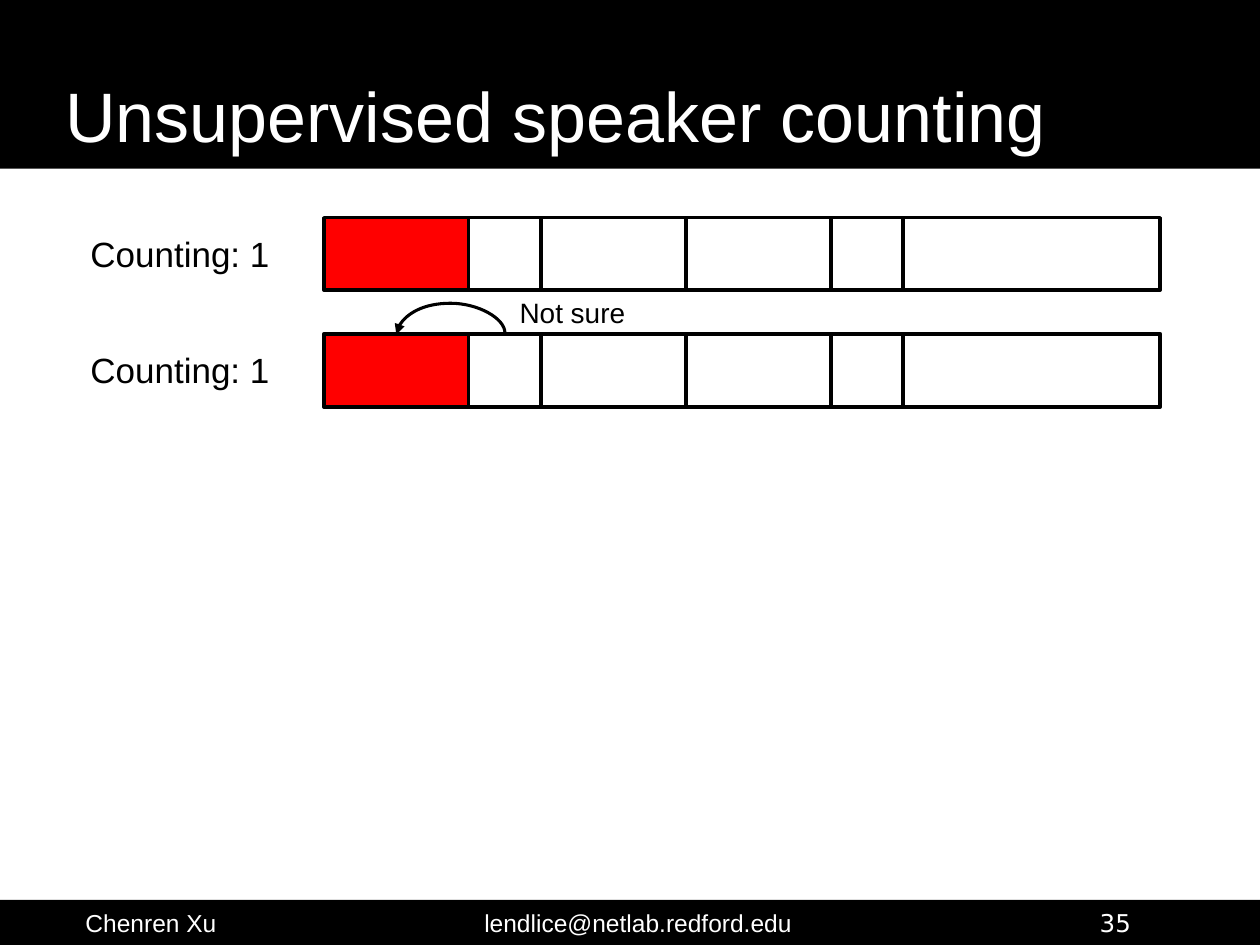
from pptx import Presentation
from pptx.dml.color import RGBColor
from pptx.enum.shapes import MSO_CONNECTOR, MSO_SHAPE
from pptx.enum.text import MSO_ANCHOR, PP_ALIGN
from pptx.oxml import parse_xml
from pptx.oxml.ns import nsdecls
from pptx.util import Cm, Pt

BLACK = RGBColor(0, 0, 0)
WHITE = RGBColor(255, 255, 255)
RED = RGBColor(255, 0, 0)
SEGMENT_WIDTHS = [2.92, 1.46, 2.92, 2.92, 1.46, 5.18]


def add_rect(shapes, x, y, w, h, fill, outlined=False):
    """Add a filled rectangle, with a black outline if asked."""
    sp = shapes.add_shape(MSO_SHAPE.RECTANGLE, Cm(x), Cm(y), Cm(w), Cm(h))
    sp.shadow.inherit = False
    sp.fill.solid()
    sp.fill.fore_color.rgb = fill
    if outlined:
        sp.line.color.rgb = BLACK
        sp.line.width = Pt(2)
    else:
        sp.line.fill.background()
    return sp


def add_text(s, x, y, w, h, text, size, color, align=PP_ALIGN.CENTER,
             anchor=MSO_ANCHOR.TOP, font="Arial"):
    """Add a one-paragraph text box."""
    tf = s.shapes.add_textbox(Cm(x), Cm(y), Cm(w), Cm(h)).text_frame
    tf.word_wrap = True
    tf.vertical_anchor = anchor
    p = tf.paragraphs[0]
    p.text = text
    p.alignment = align
    p.font.name = font
    p.font.size = Pt(size)
    p.font.color.rgb = color


def add_header(s, x, y, w, h):
    """Draw the title band."""
    add_rect(s.shapes, x, y, w, h, BLACK)
    add_text(s, x + 1.07, y + 1.17, w - 2.18, h - 1.29,
             "Unsupervised speaker counting", 40, WHITE,
             PP_ALIGN.LEFT, MSO_ANCHOR.BOTTOM)


def add_footer(s, x, y, w, h):
    """Draw the footer band with author, address and page number."""
    add_rect(s.shapes, x, y, w, h, BLACK)
    add_text(s, x + 1.09, y + 0.03, 3.91, 0.76, "Chenren Xu", 14, WHITE)
    add_text(s, x + 8.56, y + 0.03, 8.61, 0.76,
             "lendlice@netlab.redford.edu", 14, WHITE)
    add_text(s, x + 21.92, y + 0.03, 2.44, 0.74, "35", 14, WHITE,
             PP_ALIGN.LEFT, font="DejaVu Sans")


def add_counting_row(s, x, y, h):
    """Draw a counting label and its segmented bar."""
    add_text(s, x, y + 0.18, 5.28, 1.12, "Counting: 1", 20, BLACK)
    bar = s.shapes.add_group_shape()
    left = x + 5.54
    for i, width in enumerate(SEGMENT_WIDTHS):
        add_rect(bar.shapes, left, y, width, h, WHITE if i else RED, True)
        left += width


def add_comparison_arc(s, x, y, span):
    """Draw an arc above y from the second segment back to the first, with its label."""
    depth = 0.03
    cx = s.shapes.add_connector(MSO_CONNECTOR.CURVE, 0, 0, 0, 0)
    cx.left, cx.top = Cm(x + (span - depth) / 2), Cm(y - span / 2)
    cx.width, cx.height = Cm(depth), Cm(span)
    xfrm = cx._element.spPr.xfrm
    for name, value in (("rot", "5400000"), ("flipH", "1"), ("flipV", "1")):
        xfrm.set(name, value)
    guides = cx._element.spPr.prstGeom.get_or_add_avLst()
    guides.append(parse_xml(f'<a:gd {nsdecls("a")} name="adj1" fmla="val 2100000"/>'))
    cx.line.color.rgb = BLACK
    cx.line.width = Pt(1.75)
    cx.line._get_or_add_ln().append(
        parse_xml(f'<a:headEnd {nsdecls("a")} type="triangle"/>'))
    cx._element.spPr.append(parse_xml(f'<a:effectLst {nsdecls("a")}/>'))
    add_text(s, x + 0.87, y - 0.89, 5.36, 0.94, "Not sure", 16, BLACK)


def main():
    """Build the slide and save it."""
    prs = Presentation()
    prs.slide_width, prs.slide_height = Cm(25.4), Cm(19.05)
    s = prs.slides.add_slide(prs.slide_layouts[6])
    add_header(s, 0, 0, 25.4, 3.4)
    add_footer(s, 0, 18.14, 25.4, 0.91)
    add_counting_row(s, 0.99, 4.39, 1.46)
    add_counting_row(s, 0.99, 6.73, 1.48)
    add_comparison_arc(s, 7.99, 6.73, 2.19)
    prs.save("out.pptx")


if __name__ == "__main__":
    main()
